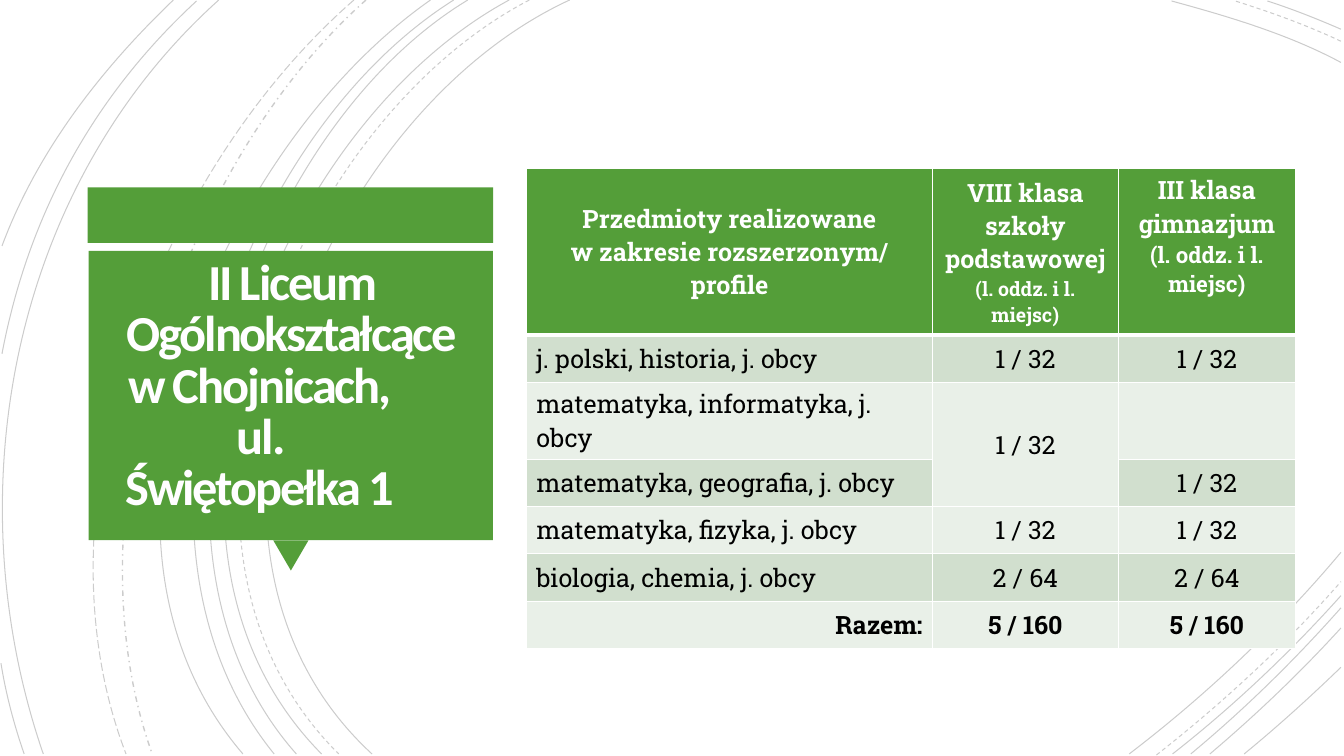
from lxml import etree
from pptx import Presentation
from pptx.dml.color import RGBColor
from pptx.enum.dml import MSO_LINE
from pptx.enum.shapes import MSO_SHAPE
from pptx.enum.text import MSO_ANCHOR, MSO_AUTO_SIZE, PP_ALIGN
from pptx.oxml.ns import qn
from pptx.util import Inches, Pt

GREEN = RGBColor(0x54, 0x9E, 0x39)
BAND = RGBColor(0xD1, 0xDF, 0xCE)
PALE = RGBColor(0xE9, 0xF0, 0xE8)
WHITE = RGBColor(0xFF, 0xFF, 0xFF)
TITLE_WHITE = RGBColor(0xFF, 0xFE, 0xFF)
BLACK = RGBColor(0, 0, 0)
LEFT, CENTER, RIGHT = PP_ALIGN.LEFT, PP_ALIGN.CENTER, PP_ALIGN.RIGHT
MIDDLE = MSO_ANCHOR.MIDDLE
SOLID, DASH = MSO_LINE.SOLID, MSO_LINE.DASH
DASH_DOT, LONG_DASH = MSO_LINE.DASH_DOT, MSO_LINE.LONG_DASH
RECT, TRIANGLE = MSO_SHAPE.RECTANGLE, MSO_SHAPE.ISOSCELES_TRIANGLE

ARCS = [
    ([(5.65, 0), (3.15, 1.15), (1.43, 5.4), (3.69, 7.48)], SOLID),
    ([(13.3, 0.62), (12.78, 0.34), (12.17, 0.16), (11.62, 0.01)], SOLID),
    ([(11.2, 7.48), (11.96, 6.9), (12.68, 6.22), (13.3, 5.48)], SOLID),
    ([(5.25, 0), (2.85, 1.25), (1.23, 5.37), (3.36, 7.48)], DASH),
    ([(13.3, 0.41), (12.96, 0.25), (12.6, 0.12), (12.25, 0.01)], DASH),
    ([(11.47, 7.49), (12.12, 6.98), (12.75, 6.4), (13.3, 5.77)], DASH),
    ([(5.05, 0), (2.7, 1.27), (1.1, 5.37), (3.19, 7.48)], SOLID),
    ([(13.3, 0.29), (13.07, 0.19), (12.82, 0.09), (12.57, 0.01)], SOLID),
    ([(11.63, 7.48), (12.23, 7.01), (12.79, 6.48), (13.3, 5.91)], SOLID),
    ([(4.64, 0), (2.44, 1.33), (1.1, 5.41), (2.94, 7.48)], SOLID),
    ([(11.81, 7.48), (12.34, 7.04), (12.84, 6.55), (13.3, 6.03)], SOLID),
    ([(4.5, 0), (2.31, 1.38), (0.97, 5.33), (2.72, 7.48)], SOLID),
    ([(12, 7.48), (12.46, 7.09), (12.9, 6.67), (13.3, 6.23)], SOLID),
    ([(4.27, 0), (2.17, 1.47), (0.53, 5.29), (2.41, 7.48)], SOLID),
    ([(12.34, 7.48), (12.67, 7.21), (12.99, 6.92), (13.3, 6.62)], SOLID),
    ([(3.63, 0), (1.76, 1.66), (0.65, 5.09), (1.51, 7.48)], DASH_DOT),
    ([(3.51, 0), (1.57, 1.69), (0.29, 4.99), (1.25, 7.48)], LONG_DASH),
    ([(2.17, 0), (0.11, 1.85), (-0.46, 4.9), (0.43, 7.48)], SOLID),
    ([(1.95, 0.01), (0.92, 0.96), (0.28, 2.14), (0.02, 3.51)], SOLID),
    ([(0.01, 6.58), (0.06, 6.89), (0.14, 7.19), (0.24, 7.48)], SOLID),
    ([(1.72, 0), (1, 0.69), (0.37, 1.5), (0.02, 2.44)], SOLID),
]

HEADERS = [
    [("Przedmioty realizowane", 18), ("w zakresie rozszerzonym/ profile", 18)],
    [("VIII klasa", 18), ("szkoły podstawowej", 18), ("(l. oddz. i l. miejsc)", 14)],
    [("III klasa", 18), ("gimnazjum", 18), ("(l. oddz. i l. miejsc)", 16)],
]
PROFILES = [
    ("j. polski, historia, j. obcy", "1 / 32", "1 / 32"),
    ("matematyka, informatyka, j. obcy", "1 / 32", ""),
    ("matematyka, geografia, j. obcy", "", "1 / 32"),
    ("matematyka, fizyka, j. obcy", "1 / 32", "1 / 32"),
    ("biologia, chemia, j. obcy", "2 / 64", "2 / 64"),
    ("Razem:", "5 / 160", "5 / 160"),
]


def write(p, text, font="Roboto Slab", size=18, color=BLACK, bold=False,
          align=LEFT, spacing=None):
    p.alignment = align
    if not text:
        p.font.size = Pt(size)
        return
    r = p.add_run()
    r.text = text
    r.font.name, r.font.size = font, Pt(size)
    r.font.bold, r.font.color.rgb = bold, color
    if spacing:
        r.font._element.set("spc", str(spacing))


class Deck:
    font = "Calibri"

    def __init__(self):
        self.prs = Presentation()
        self.prs.slide_width, self.prs.slide_height = Inches(13.33), Inches(7.5)
        self.s = self.prs.slides.add_slide(self.prs.slide_layouts[5])

    def arc(self, points, dash):
        start, *rest = [(Inches(x), Inches(y)) for x, y in points]
        builder = self.s.shapes.build_freeform(*start)
        builder.add_line_segments(rest, close=False)
        sp = builder.convert_to_shape()
        outline = sp._element.find(".//" + qn("a:path"))
        curve = etree.SubElement(outline, qn("a:cubicBezTo"))
        for segment in outline.findall(qn("a:lnTo")):
            curve.append(segment[0])
            outline.remove(segment)
        sp.shadow.inherit = False
        sp.fill.background()
        sp.line.color.rgb = BLACK
        sp.line.width = Pt(1 if dash == DASH_DOT else 0.75)
        sp.line.dash_style = dash
        color = sp.line._ln.find(".//" + qn("a:srgbClr"))
        etree.SubElement(color, qn("a:alpha")).set("val", "20000")

    def shape(self, kind, x, y, w, h, rotation=0):
        sp = self.s.shapes.add_shape(kind, Inches(x), Inches(y), Inches(w), Inches(h))
        sp.shadow.inherit = False
        sp.fill.solid()
        sp.fill.fore_color.rgb = GREEN
        sp.line.fill.background()
        sp.rotation = rotation

    def title(self, lines, x, y, w, h):
        sp = self.s.shapes.title
        sp.left, sp.top, sp.width, sp.height = map(Inches, (x, y, w, h))
        self.s.shapes._spTree.append(sp._element)
        tf = sp.text_frame
        tf.word_wrap, tf.auto_size, tf.vertical_anchor = True, MSO_AUTO_SIZE.NONE, MIDDLE
        tf.margin_left = tf.margin_right = Inches(0.25)
        tf.margin_top = tf.margin_bottom = Inches(0.25)
        for i, (text, indent) in enumerate(lines):
            p = tf.add_paragraph() if i else tf.paragraphs[0]
            p.line_spacing = 0.85
            write(p, text, font=self.font, size=36, color=TITLE_WHITE, bold=True,
                  align=CENTER, spacing=-150)
            if indent:
                p._p.get_or_add_pPr().set("marR", str(Inches(indent)))

    def table(self, x, y, widths, heights):
        frame = self.s.shapes.add_table(len(heights), len(widths), Inches(x), Inches(y),
                                        Inches(sum(widths)), Inches(sum(heights)))
        table = frame.table
        for column, width in zip(table.columns, widths):
            column.width = Inches(width)
        for row, height in zip(table.rows, heights):
            row.height = Inches(height)
        return table

    def cell(self, cell, lines, fill, bottom=1, **style):
        cell.vertical_anchor = MIDDLE
        for i, (text, size) in enumerate(lines):
            p = cell.text_frame.add_paragraph() if i else cell.text_frame.paragraphs[0]
            write(p, text, size=size, **style)
        tc_pr = cell._tc.get_or_add_tcPr()
        for side, width in (("L", 1), ("R", 1), ("T", 1), ("B", bottom)):
            ln = etree.SubElement(tc_pr, qn("a:ln" + side), w=str(Pt(width)))
            line_fill = etree.SubElement(ln, qn("a:solidFill"))
            etree.SubElement(line_fill, qn("a:srgbClr"), val=str(WHITE))
        cell.fill.solid()
        cell.fill.fore_color.rgb = fill


def main():
    deck = Deck()
    for points, dash in ARCS:
        deck.arc(points, dash)
    deck.shape(RECT, 0.87, 1.86, 4.02, 0.55)
    deck.shape(TRIANGLE, 2.71, 5.36, 0.35, 0.3, rotation=180)
    deck.shape(RECT, 0.88, 2.49, 4.01, 2.87)

    table = deck.table(5.22, 1.67, [4.03, 1.84, 1.76], [1.53, 0.47, 0.74] + [0.47] * 4)
    for col, lines in enumerate(HEADERS):
        deck.cell(table.cell(0, col), lines, GREEN, bottom=3,
                  color=WHITE, bold=True, align=CENTER)
    table.cell(0, 2).margin_bottom = Inches(0.36)
    for row, values in enumerate(PROFILES, 1):
        total = row == len(PROFILES)
        for col, text in enumerate(values):
            align = CENTER if col else RIGHT if total else LEFT
            deck.cell(table.cell(row, col), [(text, 18)], BAND if row % 2 else PALE,
                      bold=total, align=align)
    table.cell(2, 1).merge(table.cell(3, 1))

    deck.title([("II Liceum Ogólnokształcące", 0), ("w Chojnicach,", 0.63),
                ("ul. Świętopełka 1", 0)], 0.98, 2.5, 3.83, 2.69)
    deck.prs.save("out.pptx")


if __name__ == "__main__":
    main()
